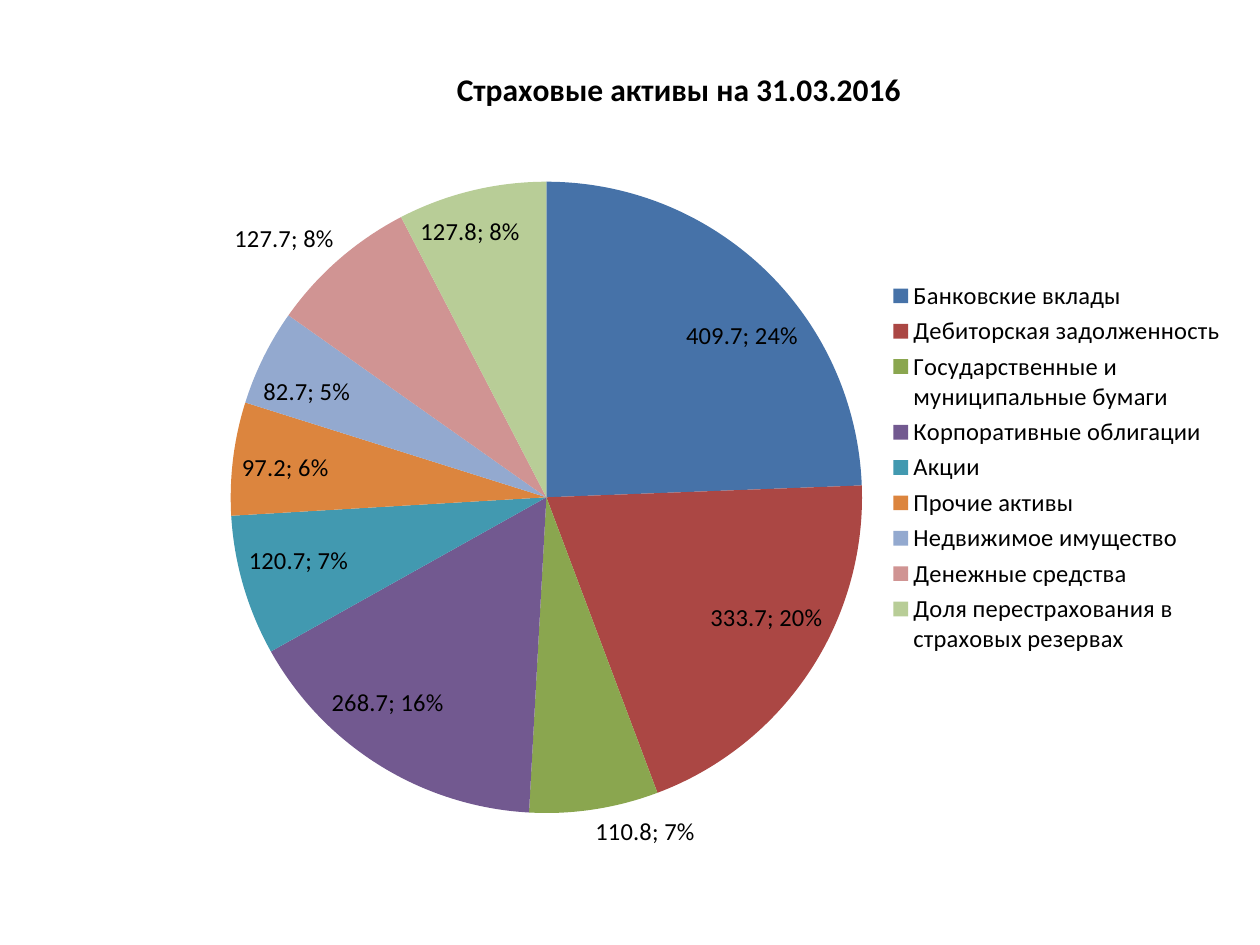
"""Build a slide with a pie chart of insurance assets."""
from lxml import etree
from pptx import Presentation
from pptx.chart.data import CategoryChartData
from pptx.dml.color import RGBColor
from pptx.enum.chart import XL_CHART_TYPE, XL_LABEL_POSITION, XL_LEGEND_POSITION
from pptx.oxml.ns import qn
from pptx.util import Cm, Pt

PIE = XL_CHART_TYPE.PIE
BEST = XL_LABEL_POSITION.BEST_FIT
OUTSIDE = XL_LABEL_POSITION.OUTSIDE_END
RIGHT = XL_LEGEND_POSITION.RIGHT

COLORS = {
    "text": "000000",
    "Банковские вклады": "4672A8",
    "Дебиторская задолженность": "AB4744",
    "Государственные и муниципальные бумаги": "8AA64F",
    "Корпоративные облигации": "725990",
    "Акции ": "4299B0",
    "Прочие активы": "DC853E",
    "Недвижимое имущество": "93A9CF",
    "Денежные средства": "D09493",
    "Доля перестрахования в страховых резервах": "B8CD97",
}
VALUES = [409.7, 333.7, 110.8, 268.7, 120.7, 97.2, 82.7, 127.7, 127.8]
OUTER = (2, 7)


def style(font, size, bold=False):
    font.name = "Calibri"
    font.size = Pt(size)
    font.bold = bold
    font.color.rgb = RGBColor.from_string(COLORS["text"])


def place(part, index, **box):
    for old in part.findall(qn("c:layout")):
        part.remove(old)
    layout = etree.Element(qn("c:layout"))
    manual = etree.SubElement(layout, qn("c:manualLayout"))
    if "plotArea" in part.tag:
        etree.SubElement(manual, qn("c:layoutTarget")).set("val", "inner")
    for axis in "xy":
        etree.SubElement(manual, qn(f"c:{axis}Mode")).set("val", "edge")
    for key, value in box.items():
        etree.SubElement(manual, qn(f"c:{key}")).set("val", str(value))
    part.insert(index, layout)


deck = Presentation()
deck.slide_width, deck.slide_height = Cm(25.4), Cm(19.05)
slide = deck.slides.add_slide(deck.slide_layouts[6])

names = [name for name in COLORS if name != "text"]
data = CategoryChartData()
data.categories = names
data.add_series("Series 1", VALUES)
frame = slide.shapes.add_chart(PIE, Cm(2.31), Cm(0.74), Cm(22.61), Cm(17.2), data)
chart = frame.chart
style(chart.font, 10)

chart.has_title = True
title = chart.chart_title.text_frame
title.text = "Страховые активы на 31.03.2016"
style(title.paragraphs[0].font, 18, True)

chart.has_legend = True
legend = chart.legend
legend.position = RIGHT
legend.include_in_layout = False
style(legend.font, 14)

plot = chart.plots[0]
plot.vary_by_categories = True
series = plot.series[0]
labels = series.data_labels
labels.show_value = True
labels.show_percentage = True
labels.position = BEST
style(labels.font, 14)

for index, name in enumerate(names):
    point = series.points[index]
    point.format.fill.solid()
    point.format.fill.fore_color.rgb = RGBColor.from_string(COLORS[name])
    point.format.line.fill.background()

for index in OUTER:
    label = series.points[index].data_label
    style(label.font, 14)
    label.position = OUTSIDE

root = chart._chartSpace
for flag in root.iter(qn("c:showPercent")):
    flag.set("val", "1")
for last in list(root.iter(qn("c:showBubbleSize"))):
    gap = etree.Element(qn("c:separator"))
    gap.text = "; "
    last.addnext(gap)

place(root.find(".//" + qn("c:title")), 1, x=0.3, y=0.03)
place(root.find(".//" + qn("c:plotArea")), 0, x=0.1, y=0.17, w=0.57, h=0.74)
place(root.find(".//" + qn("c:legend")), 1, x=0.69, y=0.28, w=0.3, h=0.45)

deck.save("out.pptx")
